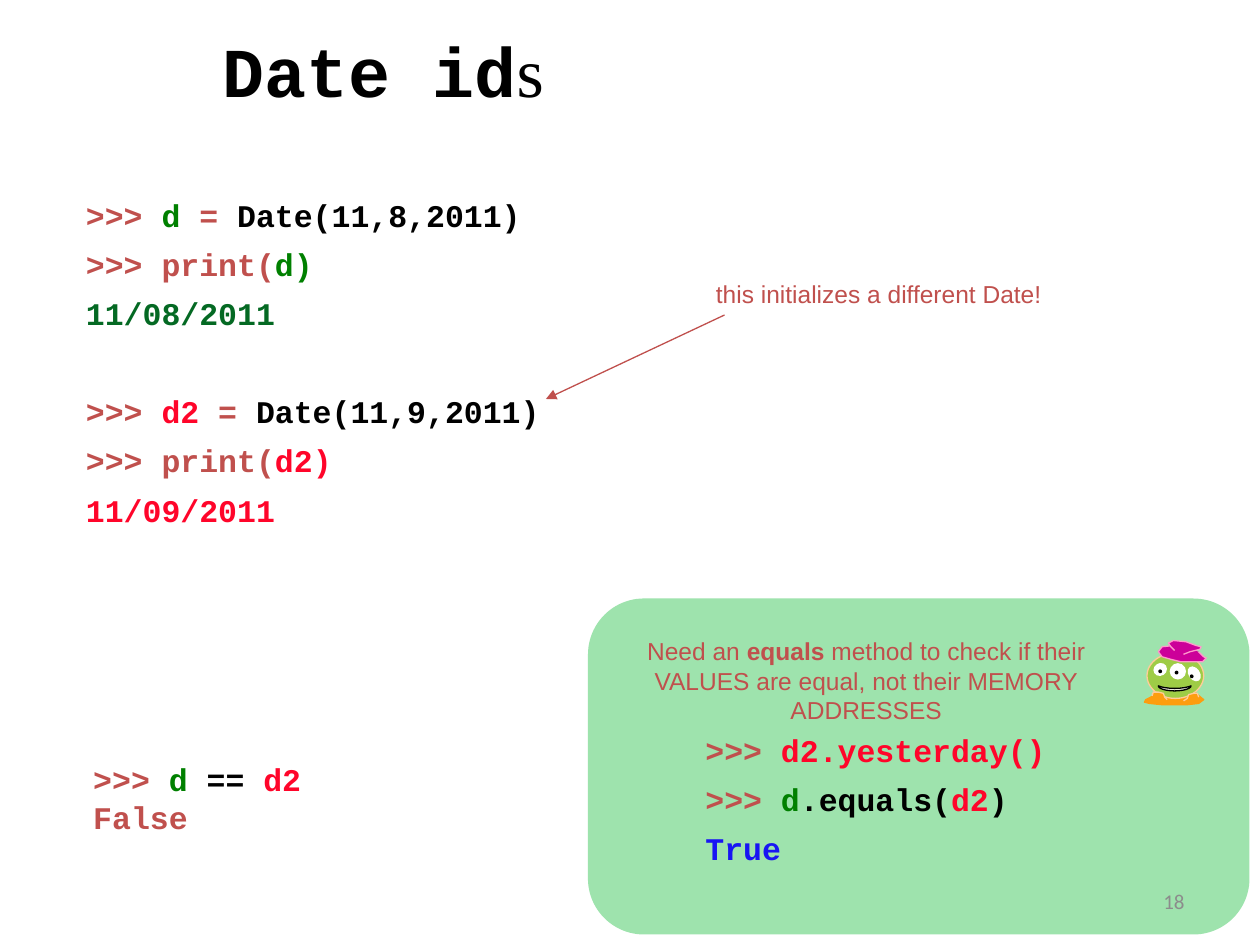
from lxml.etree import SubElement as Sub
from pptx import Presentation
from pptx.dml.color import RGBColor as Rgb
from pptx.enum.shapes import MSO_CONNECTOR as Conn, MSO_SHAPE as Kind
from pptx.enum.text import MSO_ANCHOR as Anchor, PP_ALIGN as Align
from pptx.oxml.ns import qn
from pptx.util import Inches, Pt

WIDE, HIGH = Inches(10), Inches(7.5)
COLS, ROWS = 120, 90
CELL = WIDE / COLS
INK = dict(black="000000", white="FFFFFF", brick="C0504D", green="008000",
           pine="046923", red="FF052A", blue="1815F3", gray="8C8C8C",
           mint="9EE3AD", lime="9ECC46", peach="FFCC99", gold="FD9D0F",
           plum="CC0099", pink="FF99CC", cream="EEECE1")
MONO = "Courier New"
PROMPT = (">>> ", "brick")


def tint(name):
    return Rgb.from_string(INK[name])


def cells(*sizes):
    return [round(size * CELL) for size in sizes]


def paint(shape, fill, line=None):
    shape.shadow.inherit = False
    shape.fill.solid()
    shape.fill.fore_color.rgb = tint(fill)
    if line:
        shape.line.color.rgb = tint(line)
        shape.line.width = Pt(0.75)
    else:
        shape.line.fill.background()


def write(slide, box, lines, size=18, font=MONO, bold=True, align=Align.LEFT):
    frame = slide.shapes.add_textbox(*cells(*box)).text_frame
    frame.word_wrap = True
    for row, parts in enumerate(lines):
        para = frame.add_paragraph() if row else frame.paragraphs[0]
        para.alignment = align
        for text, ink in parts:
            run = para.add_run()
            run.text = text
            run.font.size, run.font.name, run.font.bold = Pt(size), font, bold
            run.font.color.rgb = tint(ink)
    return frame


def title(slide, box):
    frame = write(slide, box, [[("Date id", "black"), ("s", "black")]],
                  size=40, align=Align.CENTER)
    tail = frame.paragraphs[0].runs[-1].font
    tail.name, tail.bold = "Times New Roman", False


def code(slide, box):
    frame = write(slide, box, [
        [PROMPT, ("d ", "green"), ("= ", "brick"), ("Date(11,8,2011)", "black")],
        [PROMPT, ("print(", "brick"), ("d)", "green")],
        [("11/08/2011", "pine")],
        [PROMPT, ("d2", "red"), (" = ", "brick"), ("Date(11,9,2011)", "black")],
        [PROMPT, ("print(", "brick"), ("d2)", "red")],
        [("11/09/2011", "red")]])
    for para in frame.paragraphs:
        para.line_spacing = 1.3
    frame.paragraphs[3].space_before = Pt(28)


def note(slide, box):
    left, top, width, height = box
    write(slide, box, [[("this initializes a different Date!", "brick")]],
          size=14, font="Arial", bold=False)
    base = top + height
    arrow = slide.shapes.add_connector(
        Conn.STRAIGHT, *cells(left + 2, base, left - 15, base + 8))
    arrow.line.color.rgb = tint("brick")
    arrow.line.width = Pt(0.75)
    Sub(arrow.line._get_or_add_ln(), qn("a:tailEnd"), type="triangle")
    Sub(arrow._element.spPr, qn("a:effectLst"))


def check(slide, box):
    write(slide, box, [[PROMPT, ("d ", "green"), ("== ", "black"), ("d2", "red")],
                       [("False", "brick")]])


def panel(slide, box):
    left, top, width, height = box
    card = slide.shapes.add_shape(Kind.ROUNDED_RECTANGLE, *cells(*box))
    paint(card, "mint")
    frame = write(slide, (left + 10, top + 12, 49, 18.7), [
        [PROMPT, ("d2.yesterday()", "red")],
        [PROMPT, ("d", "green"), (".equals(", "black"), ("d2", "red"), (")", "black")],
        [("True", "blue")]])
    for para in frame.paragraphs[1:]:
        para.line_spacing = 1.3
    alien(slide, (left + 53, top + 4, 5.88, 6.12))
    need = write(slide, (left + 4, top + 3, 45, 9.7), [[
        ("Need an ", "brick"), ("equals", "brick"),
        (" method to check if their VALUES are equal, "
         "not their MEMORY ADDRESSES", "brick")]],
        size=14, font="Arial", bold=False, align=Align.CENTER)
    need.paragraphs[0].runs[1].font.bold = True


def alien(slide, box):
    left, top, width, height = cells(*box)
    unit = width / 49
    group = slide.shapes.add_group_shape().shapes

    def spot(x, y):
        return round(left + x * unit), round(top + y * unit)

    def oval(x, y, wide, high, fill, line=None, turn=0, kind=Kind.OVAL):
        part = group.add_shape(kind, *spot(x, y), round(wide * unit), round(high * unit))
        part.rotation = turn
        paint(part, fill, line)

    def blob(fill, line, *dots):
        pen = group.build_freeform(*spot(*dots[0]))
        pen.add_line_segments([spot(*dot) for dot in dots[1:]], close=False)
        paint(pen.convert_to_shape(), fill, line)

    blob("gold", "gold", (24, 39), (33, 38), (41, 42), (47, 47), (43, 50), (34, 51),
         (14, 51), (4, 50), (0, 49), (1, 47), (5, 45), (10, 42), (17, 39), (24, 39))
    oval(2, 10, 45, 36, "lime", "peach")
    oval(7, 18, 11, 10, "white", turn=327.2)
    oval(20, 18, 13, 13, "white")
    oval(35, 20, 9, 13, "white", turn=325.5)
    for x, y in (11, 23), (24, 24), (36, 27):
        oval(x, y, 3, 3, "black")
    oval(22, 25, 4, 26, "cream", "black", 270, Kind.MOON)
    blob("plum", "pink", (24, 4), (14, 5), (11, 9), (14, 13), (21, 15), (29, 17),
         (40, 17), (46, 17), (49, 14), (47, 13), (43, 9))
    blob("plum", "pink", (24, 8), (21, 5), (19, 2), (23, 0), (33, 1), (41, 4),
         (45, 5), (44, 7), (36, 9), (31, 11))
    blob("gold", "peach", (6, 44), (7, 41), (11, 41), (15, 42), (16, 45), (18, 47))
    blob("gold", "peach", (43, 45), (42, 42), (39, 42), (35, 43), (34, 46), (31, 48))


def number(slide, box):
    frame = write(slide, box, [[("18", "gray")]], size=12, font="Calibri",
                  bold=False, align=Align.RIGHT)
    frame.vertical_anchor = Anchor.MIDDLE


def main():
    deck = Presentation()
    deck.slide_width, deck.slide_height = WIDE, HIGH
    slide = deck.slides.add_slide(deck.slide_layouts[6])
    title(slide, (6, 2, 61, 9.2))
    code(slide, (7, 17, 106, 34.3))
    note(slide, (67, 26, 33.8, 4))
    check(slide, (7.7, 71.8, 35, 10.9))
    panel(slide, (56, 57, 63, 32))
    number(slide, (86, 83.4, 28, 4.8))
    deck.save("out.pptx")


if __name__ == "__main__":
    main()
